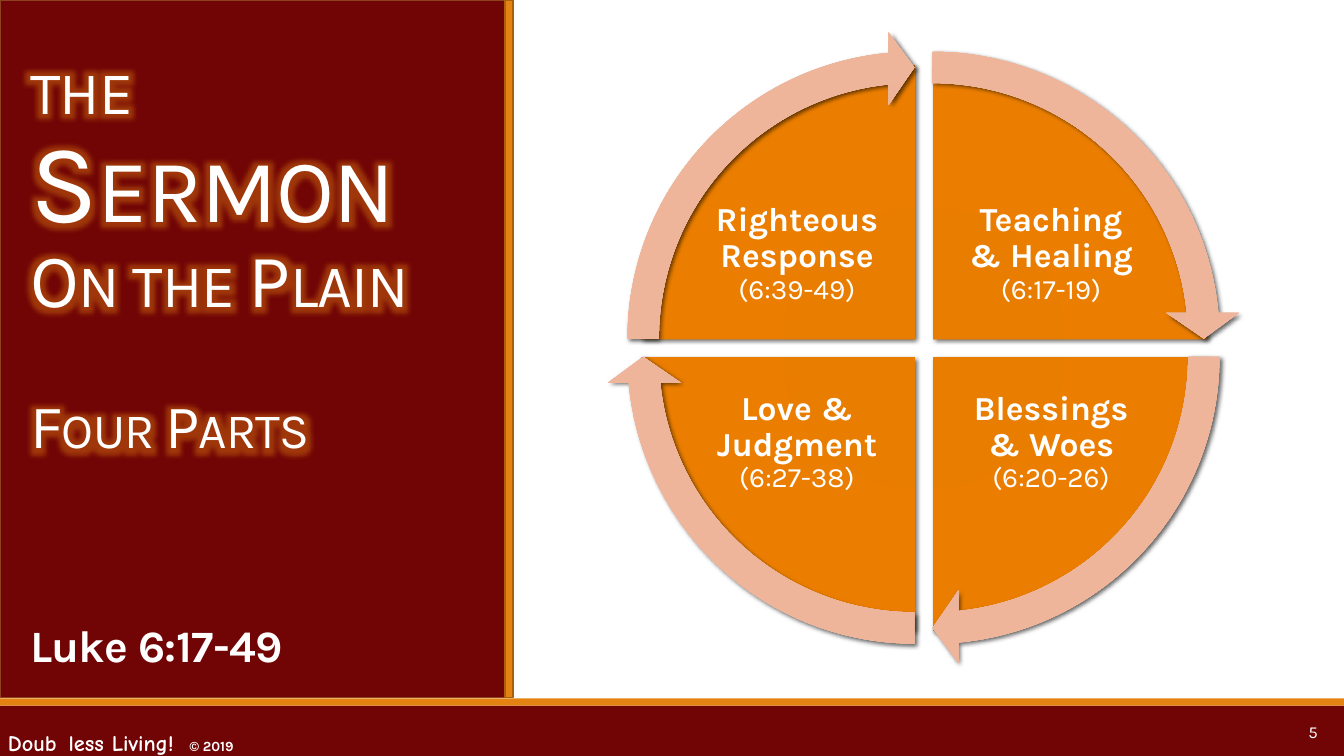
from lxml import etree
from pptx import Presentation
from pptx.dml.color import RGBColor
from pptx.enum import shapes, text
from pptx.oxml import ns
from pptx.util import Inches, Pt

MAROON = RGBColor(0x71, 0x05, 0x05)
ORANGE = RGBColor(0xE4, 0x83, 0x12)
BROWN = RGBColor(0x8C, 0x41, 0x21)
DARK_ORANGE = RGBColor(0xA9, 0x61, 0x0D)
WHITE = RGBColor(0xFF, 0xFF, 0xFF)
PIE_STOPS = [(0, RGBColor(0xE5, 0x7B, 0x00)), (34, RGBColor(0xE8, 0x7D, 0x00)),
             (70, RGBColor(0xEB, 0x7E, 0x00)), (100, RGBColor(0xEF, 0x84, 0x07))]
ARROW_STOPS = [(0, RGBColor(0xE8, 0xB0, 0x96)), (34, RGBColor(0xE9, 0xB3, 0x99)),
               (70, RGBColor(0xEE, 0xB5, 0x9A)), (100, RGBColor(0xF2, 0xC0, 0xA8))]
BODY_FONT = "Karla"
BRAND_FONT = "Comic Neue"
PARTS = [(["Teaching", "& Healing"], "(6:17-19)"),
         (["Blessings", "& Woes"], "(6:20-26)"),
         (["Love & Judgment"], "(6:27-38)"),
         (["Righteous Response"], "(6:39-49)")]


def xml(markup):
    return etree.fromstring(markup.replace(">", f' {ns.nsdecls("a")}>', 1))


def add_span(para, words, size, bold=False, font=BODY_FONT):
    span = para.add_run()
    span.text = words
    span.font.size = Pt(size)
    span.font.bold = bold
    span.font.name = font
    span.font.color.rgb = WHITE
    return span


def set_frame(frame, anchor, margins=(0.1, 0.05)):
    frame.word_wrap = True
    frame.auto_size = text.MSO_AUTO_SIZE.NONE
    frame.vertical_anchor = anchor
    frame.margin_left = frame.margin_right = Inches(margins[0])
    frame.margin_top = frame.margin_bottom = Inches(margins[1])


def add_text(page, box, anchor=text.MSO_ANCHOR.TOP, margins=(0.1, 0.05)):
    frame = page.shapes.add_textbox(*map(Inches, box)).text_frame
    set_frame(frame, anchor, margins)
    return frame.paragraphs[0]


def add_bar(page, box, fill, line=None):
    bar = page.shapes.add_shape(shapes.MSO_SHAPE.RECTANGLE, *map(Inches, box))
    bar.shadow.inherit = False
    bar.fill.solid()
    bar.fill.fore_color.rgb = fill
    if line is None:
        bar.line.fill.background()
    else:
        bar.line.color.rgb = line
        bar.line.width = Pt(1.25)


def add_cycle_shape(page, kind, box, adjustments, stops):
    """A ring part with a radial gradient and a soft shadow."""
    part = page.shapes.add_shape(kind, *map(Inches, box))
    for index, value in enumerate(adjustments):
        part.adjustments[index] = value
    part.line.fill.background()
    part.shadow.inherit = False
    props = part.element.spPr
    colours = "".join(f'<a:gs pos="{pos * 1000}"><a:srgbClr val="{colour}"/></a:gs>'
                      for pos, colour in stops)
    props.find(ns.qn("a:prstGeom")).addnext(xml(
        f'<a:gradFill><a:gsLst>{colours}</a:gsLst><a:path path="circle">'
        '<a:fillToRect l="100000" t="100000" r="100000" b="100000"/></a:path></a:gradFill>'))
    props.find(ns.qn("a:effectLst")).append(xml(
        f'<a:outerShdw blurRad="{Pt(3.5)}" dist="{Pt(2)}" dir="2700000" algn="ctr">'
        '<a:srgbClr val="000000"><a:alpha val="60000"/></a:srgbClr></a:outerShdw>'))


def add_footer(page, left, top, width, height):
    add_bar(page, (left, top, width, height), MAROON)
    add_bar(page, (left, top - 0.07, width, 0.07), ORANGE)
    para = add_text(page, (left - 0.02, top + 0.07, 3.92, 0.5))
    para._p.get_or_add_pPr().append(
        xml(f'<a:tabLst><a:tab pos="{Inches(1.8)}" algn="l"/></a:tabLst>'))
    add_span(para, "Doub", 16, True, BRAND_FONT)
    add_span(para, " ", 24, True, BRAND_FONT)
    add_span(para, "less Living!\t", 16, True, BRAND_FONT)
    add_span(para, "© 2019", 10, True)
    # Page number
    para = add_text(page, (left + 11.82, top + 0.06, 1.35, 0.4), text.MSO_ANCHOR.MIDDLE)
    para.alignment = text.PP_ALIGN.RIGHT
    add_span(para, "5", 12)


def add_title_panel(page, left, top, width, height):
    add_bar(page, (left, top, width, height), MAROON, BROWN)
    add_bar(page, (left + width, top, 0.08, height), ORANGE, DARK_ORANGE)
    # Title in small caps with a glow
    title = page.shapes.title
    title.left, title.top = Inches(left + 0.2), Inches(top + 0.4)
    title.width, title.height = Inches(4.45), Inches(4.59)
    page.shapes._spTree.append(title.element)
    frame = title.text_frame
    set_frame(frame, text.MSO_ANCHOR.TOP)
    lines = [[("the", 54), (" ", 60.3), ("Sermon", 80.1)],
             [("On the Plain", 54)], [("Four Parts", 44.1)]]
    for index, line in enumerate(lines):
        para = frame.add_paragraph() if index else frame.paragraphs[0]
        para.alignment = text.PP_ALIGN.LEFT
        para.line_spacing = 0.85
        para.space_before = Pt(54 if index == 2 else 0)
        for words, size in line:
            props = add_span(para, words, size).font._element
            props.set("cap", "small")
            props.set("spc", "-50")
            props.find(ns.qn("a:solidFill")).addnext(xml(
                f'<a:effectLst><a:glow rad="{Pt(11)}"><a:srgbClr val="{ORANGE}">'
                '<a:alpha val="40000"/></a:srgbClr></a:glow></a:effectLst>'))
    # Passage
    para = add_text(page, (left + 0.2, top + 6.11, 4.67, 0.6), text.MSO_ANCHOR.BOTTOM)
    para.line_spacing = 0.85
    add_span(para, "Luke 6:17-49", 32, True).font._element.set("spc", "-50")


def add_cycle(page, left, top, size):
    """Four quarters, clockwise from the top right, each with an arrow."""
    gap, rim = 0.18, 0.34
    turn = 60000 / 100000  # one degree in adjustment units
    arrows = []
    for index, (heading, verses) in enumerate(PARTS):
        on_right, on_bottom = index < 2, index in (1, 2)
        x, y = left + gap * on_right, top + gap * on_bottom
        start = (270 + 90 * index) % 360
        add_cycle_shape(page, shapes.MSO_SHAPE.PIE, (x, y, size, size),
                        (start * turn, (start + 90) % 360 * turn), PIE_STOPS)
        arrows.append((x - rim, y - rim, start))
        # Label
        para = add_text(page, (x + (2.92 if on_right else 0.58),
                               y + (2.85 if on_bottom else 1.16), 1.93, 1.42),
                        text.MSO_ANCHOR.MIDDLE, (0, 0))
        para.alignment = text.PP_ALIGN.CENTER
        para.line_spacing = 0.9
        for words in heading:
            add_span(para, words, 24, True)
            para.add_line_break()
        add_span(para, verses, 20)
    # Arrows lie over all quarters
    for x, y, start in arrows:
        side = size + 2 * rim - 0.01
        add_cycle_shape(page, shapes.MSO_SHAPE.CIRCULAR_ARROW, (x, y, side, side),
                        (0.051, 5.46 * turn, (start + 84.54) % 360 * turn,
                         start * turn, 0.059), ARROW_STOPS)


def main():
    deck = Presentation()
    deck.slide_width, deck.slide_height = Inches(13.33), Inches(7.5)
    page = deck.slides.add_slide(deck.slide_layouts[5])
    add_footer(page, 0, 7, 13.33, 0.5)
    add_title_panel(page, 0, 0, 5.01, 6.92)
    add_cycle(page, 6.36, 0.65, 5.43)
    deck.save("out.pptx")


if __name__ == "__main__":
    main()
